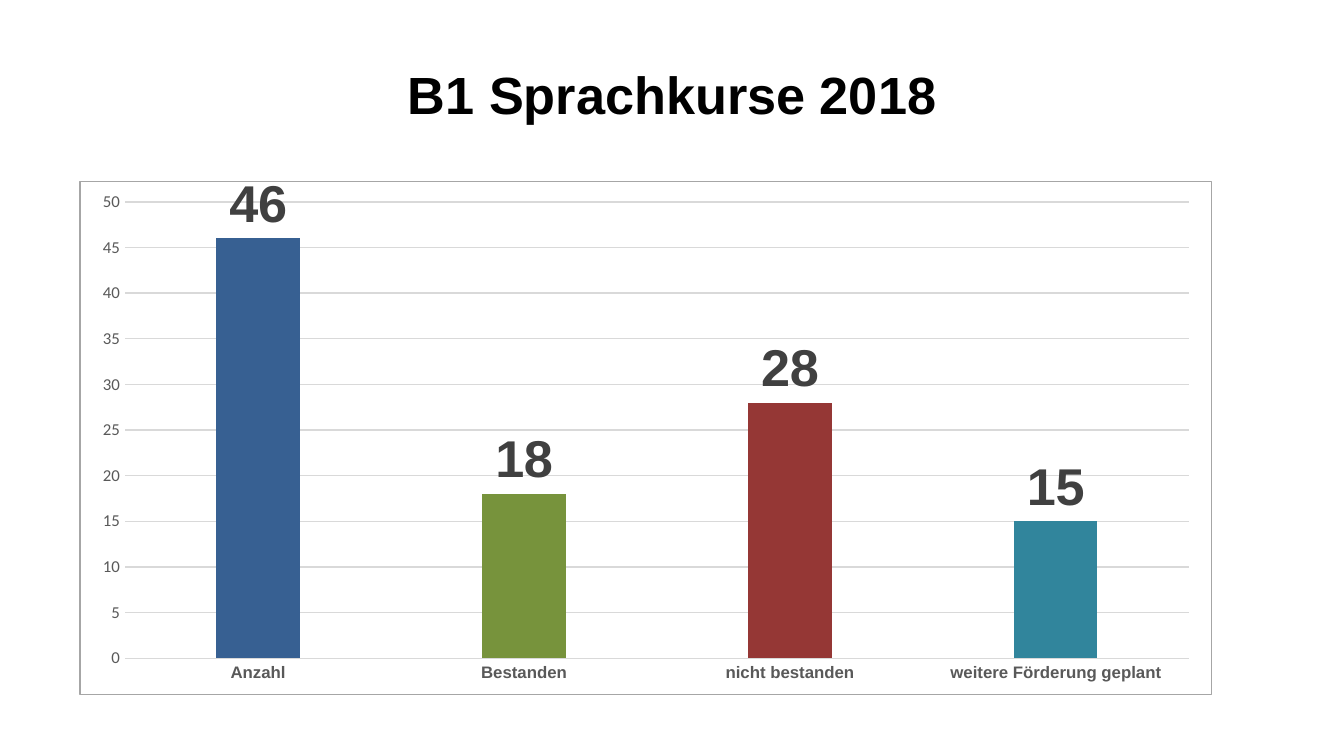
from pptx import Presentation
from pptx.chart.data import CategoryChartData
from pptx.dml.color import RGBColor
from pptx.enum.chart import XL_CHART_TYPE, XL_LABEL_POSITION, XL_TICK_MARK
from pptx.enum.text import MSO_ANCHOR, PP_ALIGN
from pptx.oxml import parse_xml
from pptx.oxml.ns import nsdecls
from pptx.util import Cm, Pt

THEME = {
    "grid": RGBColor.from_string("D9D9D9"),
    "border": "A6A6A6",
    "bars": ["376092", "77933C", "953735", "31859C"],
    "title": {"name": "Arial", "size": Pt(28), "bold": True, "color": "000000"},
    "chart": {"name": "Calibri", "size": Pt(10), "bold": False, "color": "000000"},
    "category": {"name": "Arial", "size": Pt(9), "bold": True, "color": "595959"},
    "value": {"name": "Calibri", "size": Pt(9), "bold": False, "color": "595959"},
    "label": {"name": "Arial", "size": Pt(28), "bold": True, "color": "404040"},
}
RESULTS = {
    "Anzahl": 46,
    "Bestanden": 18,
    "nicht bestanden": 28,
    "weitere Förderung geplant": 15,
}


def style_font(font, role):
    for key, value in THEME[role].items():
        if key == "color":
            font.color.rgb = RGBColor.from_string(value)
        else:
            setattr(font, key, value)


prs = Presentation()
prs.slide_width, prs.slide_height = Cm(25.4), Cm(14.28)
s = prs.slides.add_slide(prs.slide_layouts[5])

# Title
title = s.shapes.title
title.left, title.top, title.width, title.height = Cm(1.27), Cm(0.58), Cm(22.86), Cm(2.39)
tf = title.text_frame
tf.vertical_anchor = MSO_ANCHOR.MIDDLE
p = tf.paragraphs[0]
p.alignment = PP_ALIGN.CENTER
r = p.add_run()
r.text = "B1 Sprachkurse 2018"
style_font(r.font, "title")

# Column chart
data = CategoryChartData()
data.categories = list(RESULTS)
data.add_series("Series 1", list(RESULTS.values()))
chart = s.shapes.add_chart(
    XL_CHART_TYPE.COLUMN_CLUSTERED, Cm(1.5), Cm(3.33), Cm(21.41), Cm(9.8), data
).chart
chart.has_title = False
chart.has_legend = False
style_font(chart.font, "chart")

for axis, role in ((chart.category_axis, "category"), (chart.value_axis, "value")):
    axis.major_tick_mark = axis.minor_tick_mark = XL_TICK_MARK.NONE
    style_font(axis.tick_labels.font, role)

value_axis = chart.value_axis
value_axis.minimum_scale, value_axis.maximum_scale, value_axis.major_unit = 0, 50, 5
value_axis.format.line.fill.background()
for line in (chart.category_axis.format.line, value_axis.major_gridlines.format.line):
    line.color.rgb = THEME["grid"]
    line.width = Pt(0.75)

plot = chart.plots[0]
plot.gap_width, plot.overlap = 219, -27
plot.vary_by_categories = False
series = plot.series[0]
for i, color in enumerate(THEME["bars"]):
    fill = series.points[i].format.fill
    fill.solid()
    fill.fore_color.rgb = RGBColor.from_string(color)

labels = series.data_labels
labels.show_value = True
labels.position = XL_LABEL_POSITION.OUTSIDE_END
style_font(labels.font, "label")

# Fixed plot area, as shares of the chart frame
plot_area = plot._element.getparent()
for layout in plot_area.findall("{*}layout"):
    plot_area.remove(layout)
shares = "".join(
    f'<c:{key} val="{value}"/>'
    for key, value in {
        "layoutTarget": "inner", "xMode": "edge", "yMode": "edge",
        "x": 0.04, "y": 0.04, "w": 0.94, "h": 0.89,
    }.items()
)
plot_area.insert(0, parse_xml(
    f'<c:layout {nsdecls("c")}><c:manualLayout>{shares}</c:manualLayout></c:layout>'
))

# Border around the chart
chart._chartSpace.find("{*}chart").addnext(parse_xml(
    f'<c:spPr {nsdecls("c", "a")}><a:noFill/><a:ln w="{Pt(0.75)}"><a:solidFill>'
    f'<a:srgbClr val="{THEME["border"]}"/></a:solidFill></a:ln></c:spPr>'
))

prs.save("out.pptx")
